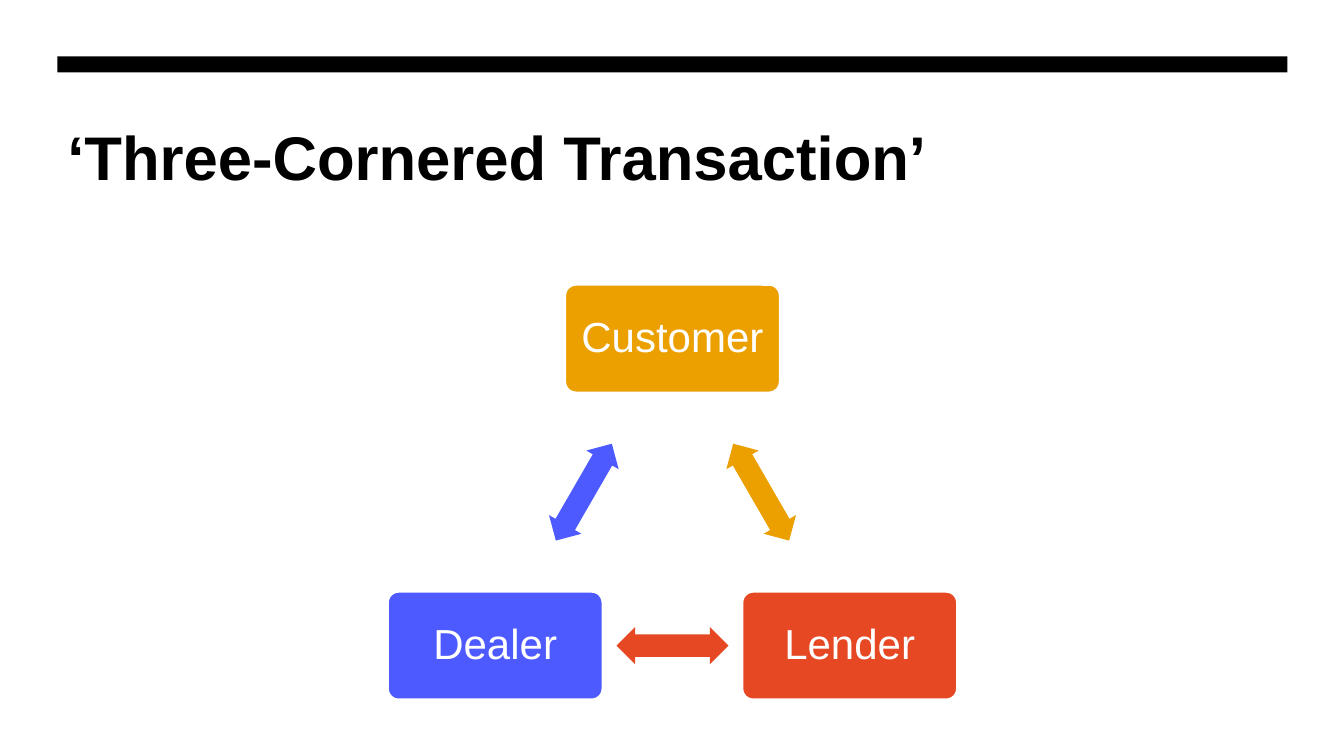
import math

from pptx import Presentation
from pptx import util as u
from pptx.dml.color import RGBColor
from pptx.enum import shapes, text

INK = {
    "black": "000000",
    "white": "FFFFFF",
    "gold": "EBA000",
    "red": "E64823",
    "blue": "4D5AFF",
}


class Deck:
    font = "Arial"

    def __init__(self, wide, high):
        self.prs = Presentation()
        self.prs.slide_width = u.Inches(wide)
        self.prs.slide_height = u.Inches(high)
        self.slide = self.prs.slides.add_slide(self.prs.slide_layouts[6])

    def color(self, name):
        return RGBColor.from_string(INK[name])

    def shape(self, kind, x, y, w, h, fill, adjust=()):
        item = self.slide.shapes.add_shape(kind, *map(u.Inches, (x, y, w, h)))
        item.shadow.inherit = False
        item.fill.solid()
        item.fill.fore_color.rgb = self.color(fill)
        item.line.fill.background()
        for i, value in enumerate(adjust):
            item.adjustments[i] = value
        return item

    def label(self, para, words, size, ink, bold=False):
        run = para.add_run()
        run.text = words
        run.font.name = self.font
        run.font.size = u.Pt(size)
        run.font.bold = bold
        run.font.color.rgb = self.color(ink)

    def bar(self, x, y, w, h):
        self.shape(shapes.MSO_SHAPE.RECTANGLE, x, y, w, h, "black")

    def title(self, words, x, y, w, h):
        frame = self.slide.shapes.add_textbox(*map(u.Inches, (x, y, w, h))).text_frame
        frame.word_wrap = True
        frame.margin_top = u.Inches(0.11)
        self.label(frame.paragraphs[0], words, 44, "black", True)

    def node(self, words, x, y, fill, w=2.13, h=1.07):
        box = self.shape(shapes.MSO_SHAPE.ROUNDED_RECTANGLE,
                         x - w / 2, y - h / 2, w, h, fill, [0.1])
        box.line.color.rgb = self.color("white")
        box.line.width = u.Pt(1.5)
        frame = box.text_frame
        frame.word_wrap = True
        frame.vertical_anchor = text.MSO_ANCHOR.MIDDLE
        frame.margin_left = frame.margin_right = u.Inches(0.12)
        frame.margin_top = frame.margin_bottom = u.Inches(0.12)
        para = frame.paragraphs[0]
        para.alignment = text.PP_ALIGN.CENTER
        para.line_spacing = 0.9
        self.label(para, words, 30, "white")

    def arrow(self, x, y, turn, fill, w=1.11, h=0.37):
        item = self.shape(shapes.MSO_SHAPE.LEFT_RIGHT_ARROW,
                          x - w / 2, y - h / 2, w, h, fill, [0.6, 0.5])
        item.rotation = turn

    def cycle(self, parts, x, y, reach):
        step = 360 / len(parts)
        spots = []
        for i in range(len(parts)):
            angle = math.radians(i * step)
            spots.append((x + reach * math.sin(angle), y - reach * math.cos(angle)))
        for i, (words, fill) in enumerate(parts):
            here, there = spots[i], spots[(i + 1) % len(parts)]
            self.node(words, *here, fill)
            self.arrow((here[0] + there[0]) / 2, (here[1] + there[1]) / 2,
                       (i + 0.5) * step, fill)


def main():
    deck = Deck(13.33, 7.5)
    deck.bar(0.57, 0.56, 12.2, 0.16)
    deck.title("‘Three-Cornered Transaction’", 0.57, 1.07, 12.2, 1.6)
    deck.cycle([("Customer", "gold"), ("Lender", "red"), ("Dealer", "blue")],
               6.67, 5.39, 2.03)
    deck.prs.save("out.pptx")


if __name__ == "__main__":
    main()
